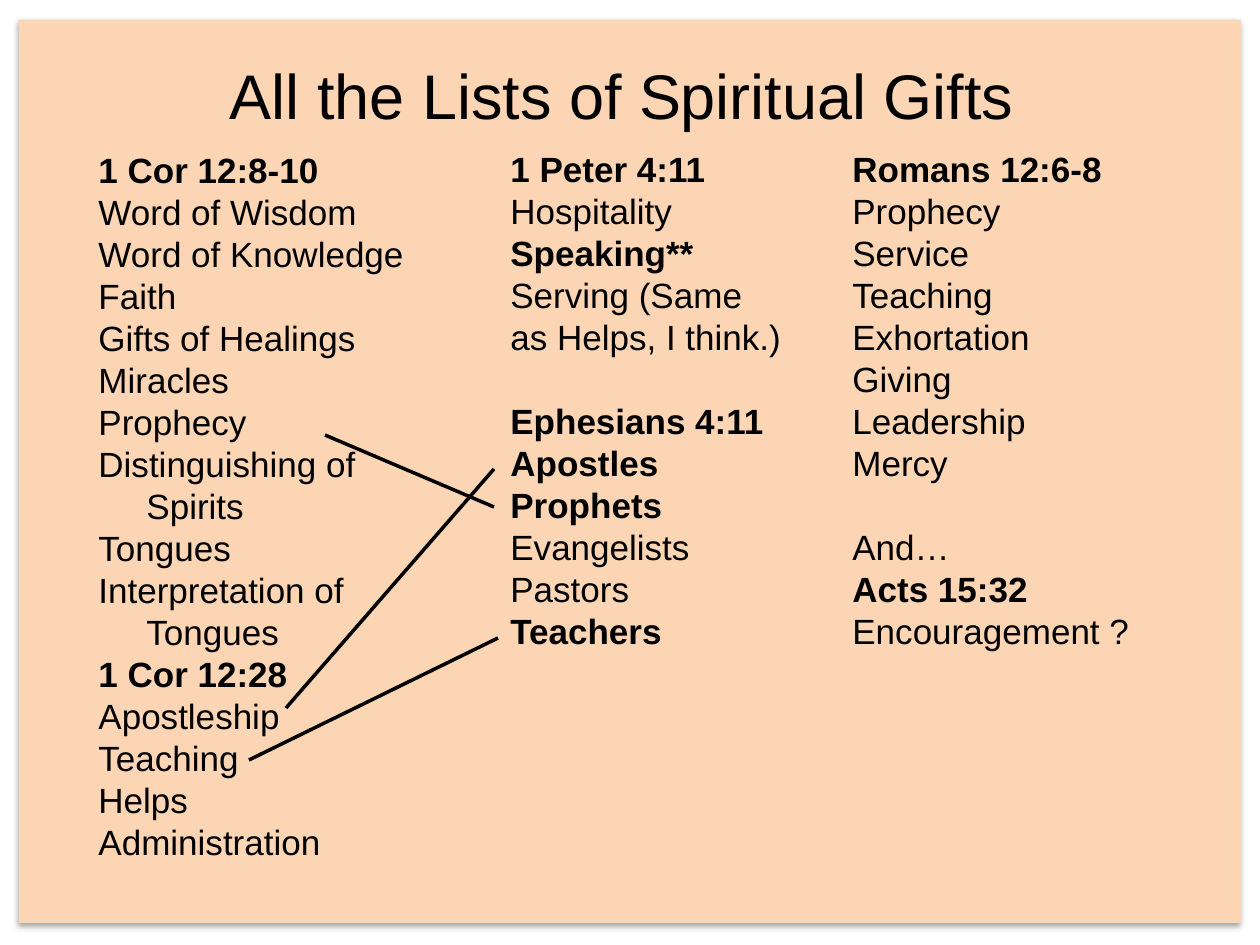
from lxml.etree import SubElement
from pptx import Presentation
from pptx.dml.color import RGBColor
from pptx.enum.shapes import MSO_CONNECTOR, MSO_SHAPE
from pptx.enum.text import PP_ALIGN
from pptx.oxml.ns import qn
from pptx.util import Pt

SCALE = 914400 / 126
LEAD = 1.2
HUES = {"panel": "FCD5B5", "ink": "000000"}

# Marks: * bold, > indented, ^ one blank line above, | next run
CORINTH = [
    "*1 Cor 12:8-10", "Word of Wisdom", "Word of Knowledge", "Faith",
    "Gifts of Healings", "Miracles", "Prophecy", "Distinguishing of",
    ">Spirits", "Tongues", "Interpretation of", ">Tongues",
    "*1 Cor 12:28", "Apostleship", "Teaching", "Helps", "Administration",
]
ROMANS = [
    "*Romans 12:6-8", "Prophecy", "Service", "Teaching", "Exhortation",
    "Giving", "Leadership", "Mercy", "^And…", "*Acts 15:32",
    "Encouragement ?",
]
PETER = [
    "*1 Peter 4:11", "Hospitality |*Speaking**",
    "Serving (Same as Helps, I think.)", "^*Ephesians 4:11", "*Apostles",
    "*Prophets", "Evangelists", "Pastors", "*Teachers",
]
LISTS = [
    ((86, 142, 486, 733), CORINTH),
    ((840, 141, 397, 522), ROMANS),
    ((498, 141, 300, 522), PETER),
]
LINKS = [
    (249, 760, 498, 638),
    (286, 708, 494, 469),
    (325, 435, 494, 507),
]


def px(num):
    return round(num * SCALE)


def hue(name):
    return RGBColor.from_string(HUES[name])


def add_panel(slide, box):
    panel = slide.shapes.add_shape(MSO_SHAPE.RECTANGLE, *map(px, box))
    panel.shadow.inherit = False
    panel.fill.solid()
    panel.fill.fore_color.rgb = hue("panel")
    panel.line.fill.background()
    effects = panel.element.spPr.find(qn("a:effectLst"))
    shade = SubElement(effects, qn("a:outerShdw"), blurRad=str(Pt(3.1)),
                       dist=str(Pt(1.8)), dir="5400000", rotWithShape="0")
    tint = SubElement(shade, qn("a:srgbClr"), val=HUES["ink"])
    SubElement(tint, qn("a:alpha"), val="35000")


def add_run(para, text, size):
    run = para.add_run()
    run.text = text.removeprefix("*")
    style = {"name": "Arial", "size": Pt(size), "bold": text.startswith("*")}
    for key, value in style.items():
        setattr(run.font, key, value)
    run.font.color.rgb = hue("ink")


def add_text(slide, box, lines, size, align=PP_ALIGN.LEFT):
    """Set one paragraph per line, reading the marks listed above."""
    frame = slide.shapes.add_textbox(*map(px, box)).text_frame
    frame.word_wrap = True
    lead = Pt(size * LEAD)
    for index, line in enumerate(lines):
        para = frame.add_paragraph() if index else frame.paragraphs[0]
        style = {"alignment": align, "line_spacing": lead}
        if line.startswith("^"):
            style["space_before"] = lead
        for key, value in style.items():
            setattr(para, key, value)
        if line.startswith(">"):
            para._p.get_or_add_pPr().set("marL", str(px(48)))
        for part in line.lstrip("^>").split("|"):
            add_run(para, part, size)


def add_link(slide, ends):
    link = slide.shapes.add_connector(MSO_CONNECTOR.STRAIGHT, *map(px, ends))
    link.line.width = Pt(2)
    link.line.color.rgb = hue("ink")
    SubElement(link.element.spPr, qn("a:effectLst"))


def main():
    deck = Presentation()
    deck.slide_width, deck.slide_height = px(1260), px(945)
    slide = deck.slides.add_slide(deck.slide_layouts[6])
    add_panel(slide, (19, 20, 1222, 903))
    add_text(slide, (66, 50, 1112, 90), ["All the Lists of Spiritual Gifts"],
             36, PP_ALIGN.CENTER)
    for box, lines in LISTS:
        add_text(slide, box, lines, 20)
    for ends in LINKS:
        add_link(slide, ends)
    deck.save("out.pptx")


if __name__ == "__main__":
    main()
